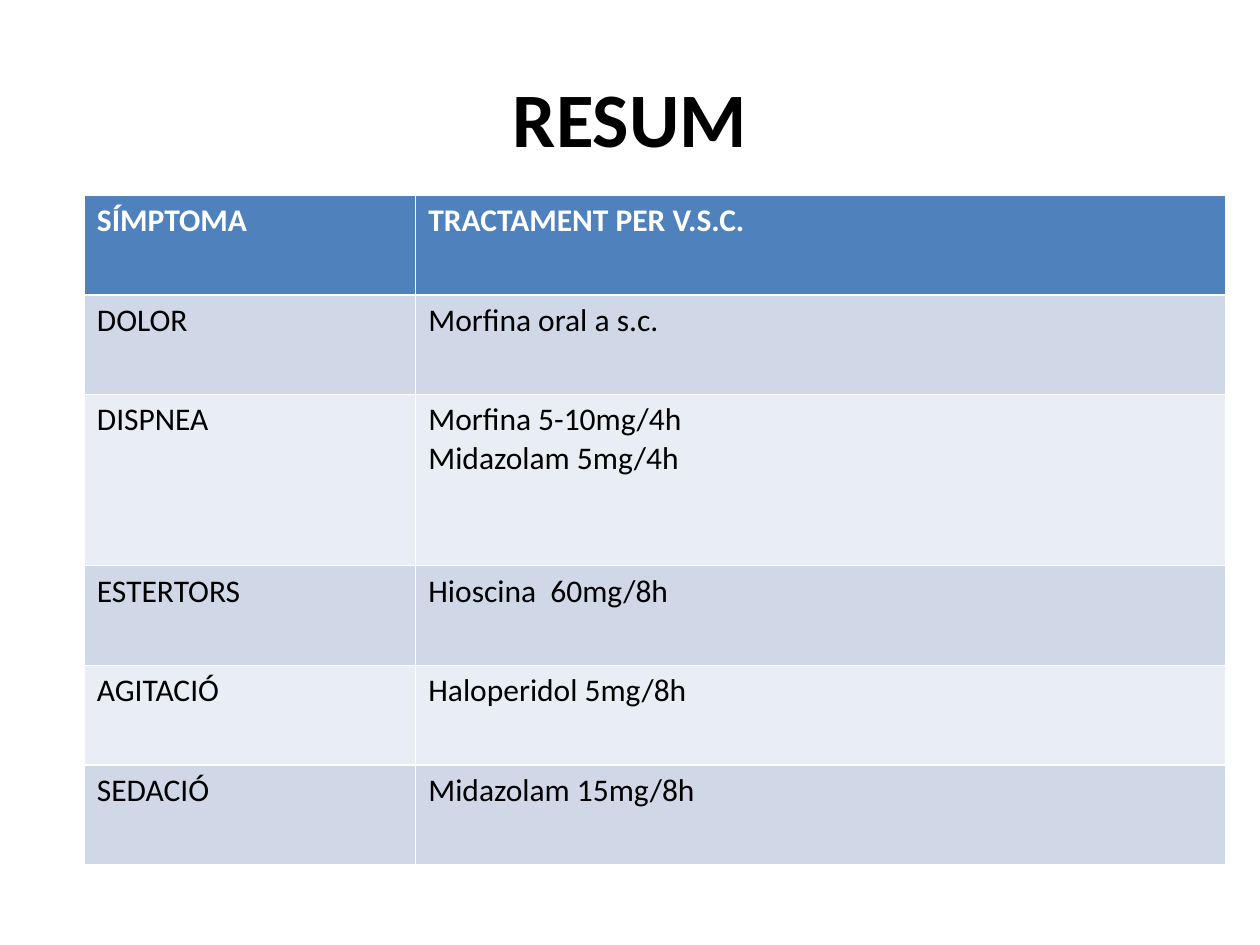
from pptx import Presentation
from pptx.dml.color import RGBColor
from pptx.enum.text import MSO_ANCHOR, PP_ALIGN
from pptx.util import Pt

MIDDLE = MSO_ANCHOR.MIDDLE
CENTER = PP_ALIGN.CENTER

FONT = "Calibri"
BLACK, WHITE = "000000", "FFFFFF"
HEADER_FILL = "4F81BD"
BAND_FILLS = ("E9EDF4", "D0D8E8")  # even rows, odd rows

COLUMN_WIDTHS = (189.4, 463)
ROW_HEIGHTS = (56.9, 56.9, 97.9, 56.9, 56.9, 56.9)
TREATMENTS = (
    ("SÍMPTOMA", "TRACTAMENT PER V.S.C."),
    ("DOLOR", "Morfina oral a s.c."),
    ("DISPNEA", "Morfina 5-10mg/4h\nMidazolam 5mg/4h"),
    ("ESTERTORS", "Hioscina  60mg/8h"),
    ("AGITACIÓ", "Haloperidol 5mg/8h"),
    ("SEDACIÓ", "Midazolam 15mg/8h"),
)


def color(hex_string):
    return RGBColor.from_string(hex_string)


def set_text(text_frame, text, size, hex_color, bold):
    text_frame.text = text
    for paragraph in text_frame.paragraphs:
        paragraph.font.name = FONT
        paragraph.font.size = Pt(size)
        paragraph.font.bold = bold
        paragraph.font.color.rgb = color(hex_color)


def add_title(slide, text, left, top, width, height):
    shape = slide.shapes.add_textbox(Pt(left), Pt(top), Pt(width), Pt(height))
    text_frame = shape.text_frame
    text_frame.word_wrap = True
    text_frame.vertical_anchor = MIDDLE
    set_text(text_frame, text, 44, BLACK, True)
    text_frame.paragraphs[0].alignment = CENTER


def add_treatment_table(slide, left, top, width, height):
    # The default table style draws the white cell borders
    table = slide.shapes.add_table(
        len(TREATMENTS), len(COLUMN_WIDTHS),
        Pt(left), Pt(top), Pt(width), Pt(height)).table
    for column, share in zip(table.columns, COLUMN_WIDTHS):
        column.width = Pt(width * share / sum(COLUMN_WIDTHS))
    for row, share in zip(table.rows, ROW_HEIGHTS):
        row.height = Pt(height * share / sum(ROW_HEIGHTS))

    # Header row, then banded rows
    for row_index, texts in enumerate(TREATMENTS):
        is_header = row_index == 0
        fill = HEADER_FILL if is_header else BAND_FILLS[row_index % 2]
        for column_index, text in enumerate(texts):
            cell = table.cell(row_index, column_index)
            cell.fill.solid()
            cell.fill.fore_color.rgb = color(fill)
            set_text(cell.text_frame, text, 18,
                     WHITE if is_header else BLACK, is_header)


def main():
    presentation = Presentation()
    presentation.slide_width, presentation.slide_height = Pt(720), Pt(540)
    slide = presentation.slides.add_slide(presentation.slide_layouts[6])
    add_title(slide, "RESUM", 36, 21.6, 648, 90)
    add_treatment_table(slide, 48.2, 111.6, 652.4, 382.4)
    presentation.save("out.pptx")


if __name__ == "__main__":
    main()
